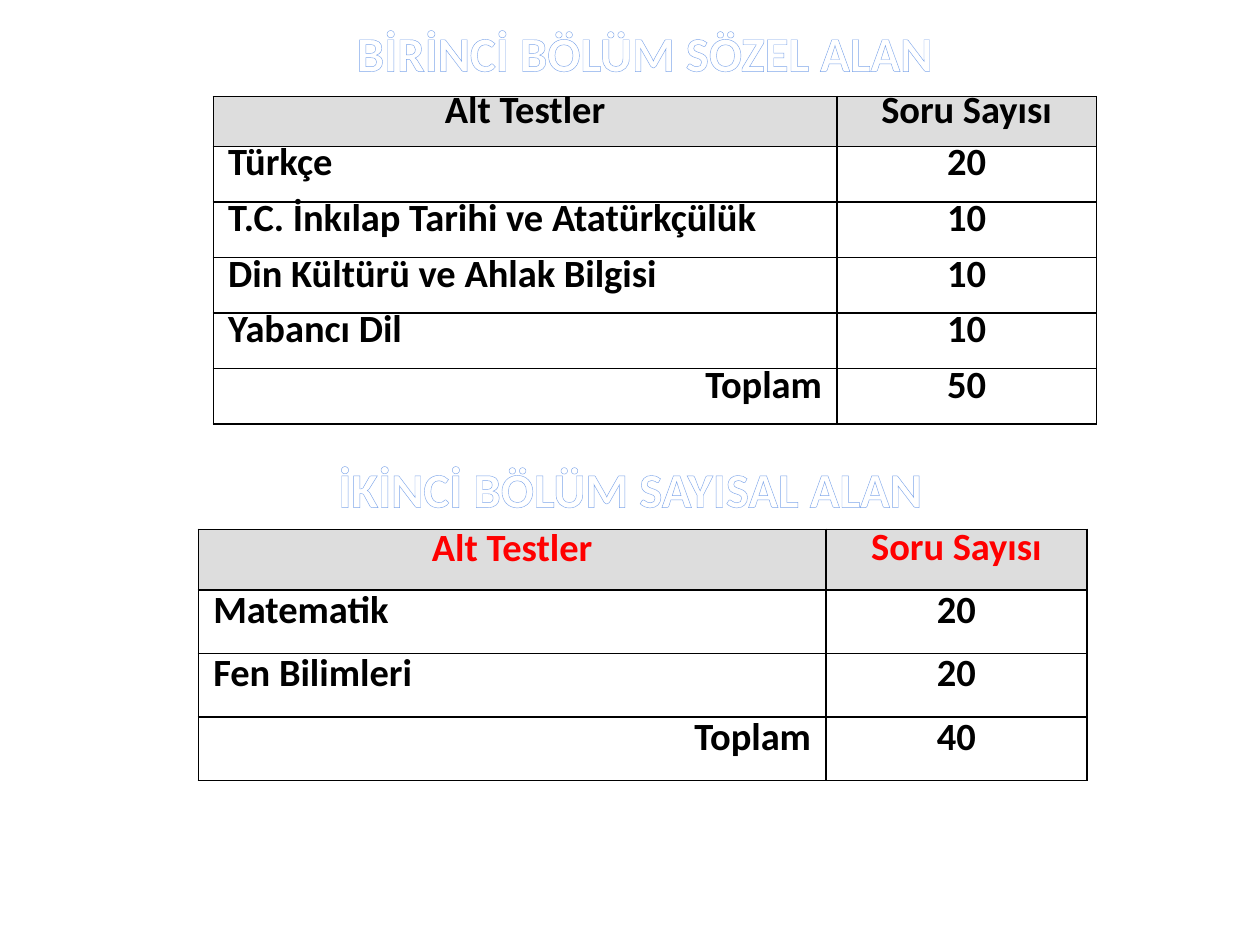
from lxml import etree
from pptx import Presentation
from pptx.dml.color import RGBColor
from pptx.enum.text import MSO_ANCHOR, MSO_AUTO_SIZE, PP_ALIGN
from pptx.oxml.ns import qn
from pptx.util import Cm, Pt


def rgb(value):
    return RGBColor.from_string(value)


def add_line(parent, tag, color, width):
    ln = etree.SubElement(parent, qn(tag), w=str(Pt(width)))
    fill = etree.SubElement(ln, qn("a:solidFill"))
    etree.SubElement(fill, qn("a:srgbClr"), val=color)
    return ln


prs = Presentation()
prs.slide_width, prs.slide_height = Cm(25.4), Cm(19.05)
s = prs.slides.add_slide(prs.slide_layouts[6])

titles = [
    ("BİRİNCİ BÖLÜM SÖZEL ALAN", 1.83, 0.33, 22.33, True),
    ("İKİNCİ BÖLÜM SAYISAL ALAN", 6.48, 9.12, 12.45, False),
]
for text, left, top, width, wrap in titles:
    sp = s.shapes.add_textbox(Cm(left), Cm(top), Cm(width), Cm(1.45))
    tf = sp.text_frame
    tf.word_wrap = wrap
    tf.auto_size = MSO_AUTO_SIZE.SHAPE_TO_FIT_TEXT
    p = tf.paragraphs[0]
    p.alignment = PP_ALIGN.CENTER
    r = p.add_run()
    r.text = text
    add_line(r.font._element, "a:ln", "7EA6EA", 2.48)
    r.font.name, r.font.size, r.font.bold = "Calibri", Pt(28), True
    r.font.color.rgb = rgb("FFFFFF")

header = ("Alt Testler", "Soru Sayısı")
tables = [
    (4.3, 1.95, (12.57, 5.23), 1, 1.12, "000000", 13.8, [
        header,
        ("Türkçe", "20"),
        ("T.C. İnkılap Tarihi ve Atatürkçülük", "10"),
        ("Din Kültürü ve Ahlak Bilgisi", "10"),
        ("Yabancı Dil", "10"),
        ("Toplam", "50"),
    ]),
    (4, 10.67, (12.65, 5.26), 1.22, 1.28, "FF0000", 12.4, [
        header,
        ("Matematik", "20"),
        ("Fen Bilimleri", "20"),
        ("Toplam", "40"),
    ]),
]
for left, top, widths, head_height, row_height, head_color, count_spacing, rows in tables:
    height = head_height + row_height * (len(rows) - 1)
    table = s.shapes.add_table(len(rows), 2, Cm(left), Cm(top), Cm(sum(widths)), Cm(height)).table
    for column, width in zip(table.columns, widths):
        column.width = Cm(width)
    for i, row in enumerate(rows):
        table.rows[i].height = Cm(row_height if i else head_height)
        for j, text in enumerate(row):
            cell = table.cell(i, j)
            cell.margin_left = cell.margin_right = cell.margin_top = cell.margin_bottom = 0
            cell.vertical_anchor = MSO_ANCHOR.MIDDLE
            tcPr = cell._tc.get_or_add_tcPr()
            for side in ("L", "R", "T", "B"):
                add_line(tcPr, f"a:ln{side}", "000000", 1)
            if i == 0:
                cell.fill.solid()
                cell.fill.fore_color.rgb = rgb("DDDDDD")
            else:
                cell.fill.background()
            p = cell.text_frame.paragraphs[0]
            p.text = text
            if i == 0 or j == 1:
                p.alignment = PP_ALIGN.CENTER
            else:
                p.alignment = PP_ALIGN.RIGHT if text == "Toplam" else PP_ALIGN.LEFT
            pPr = p._p.get_or_add_pPr()
            for side in ("marL", "marR"):
                pPr.set(side, str(Cm(0.3)))
            p.line_spacing = Pt(count_spacing if i == 0 and j == 1 else 13.8)
            p.font.name, p.font.size, p.font.bold = "Calibri", Pt(22), True
            p.font.color.rgb = rgb("000000" if i else head_color)

prs.save("out.pptx")
